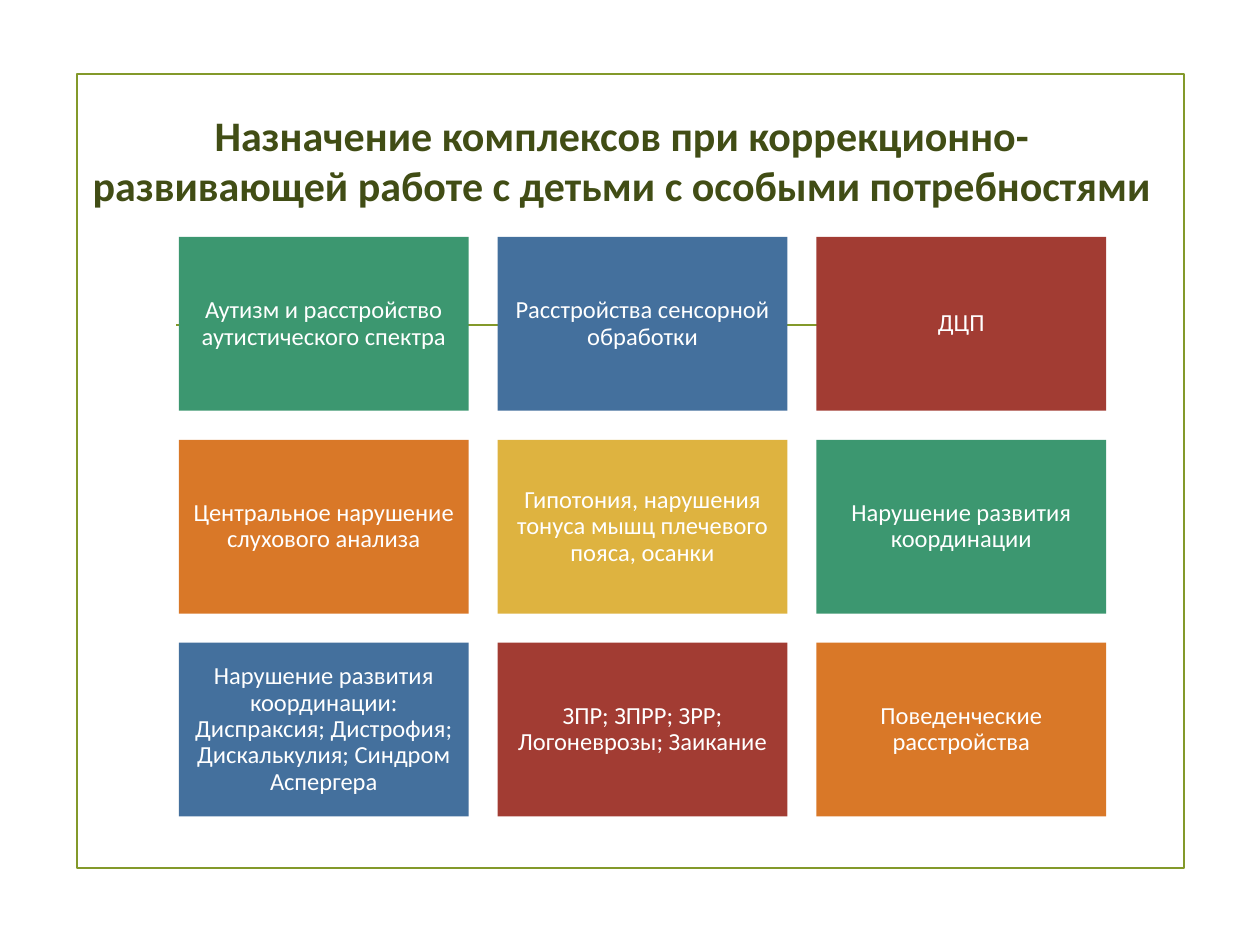
"""Builds a title slide with a three-by-three grid of coloured cards."""
from typing import NamedTuple

from lxml import etree
from pptx import Presentation
from pptx.dml.color import RGBColor
from pptx.enum.shapes import MSO_CONNECTOR, MSO_SHAPE
from pptx.enum.text import MSO_ANCHOR, MSO_AUTO_SIZE, PP_ALIGN
from pptx.oxml.ns import qn
from pptx.util import Inches, Pt

RECTANGLE = MSO_SHAPE.RECTANGLE
STRAIGHT = MSO_CONNECTOR.STRAIGHT
MIDDLE = MSO_ANCHOR.MIDDLE
NO_AUTO_SIZE = MSO_AUTO_SIZE.NONE
CENTER = PP_ALIGN.CENTER

FONT = "Calibri"
OLIVE, DARK_OLIVE, WHITE = "83992A", "414D15", "FFFFFF"
GREEN, BLUE, RED, ORANGE, YELLOW = "3C9770", "44709D", "A23C33", "D97828", "DEB340"
COLUMNS = 3
GRID_LEFT, GRID_TOP = 1.42, 1.88
CARD_WIDTH, CARD_HEIGHT, GAP = 2.3, 1.38, 0.23
TITLE = "Назначение комплексов при коррекционно- развивающей работе с детьми с особыми потребностями"


class Card(NamedTuple):
    text: str
    fill: str


CARDS = [
    Card("Аутизм и расстройство аутистического спектра", GREEN),
    Card("Расстройства сенсорной обработки", BLUE),
    Card("ДЦП", RED),
    Card("Центральное нарушение слухового анализа", ORANGE),
    Card("Гипотония, нарушения тонуса мышц плечевого пояса, осанки", YELLOW),
    Card("Нарушение развития координации", GREEN),
    Card("Нарушение развития координации: Диспраксия; Дистрофия; "
         "Дискалькулия; Синдром Аспергера", BLUE),
    Card("ЗПР; ЗПРР; ЗРР; Логоневрозы; Заикание", RED),
    Card("Поведенческие расстройства", ORANGE),
]


def rgb(color: str) -> RGBColor:
    return RGBColor.from_string(color)


def write_text(shape, text: str, size: float, color: str, bold: bool = False) -> None:
    frame = shape.text_frame
    frame.text = text
    frame.word_wrap = True
    frame.auto_size = NO_AUTO_SIZE
    frame.vertical_anchor = MIDDLE
    paragraph = frame.paragraphs[0]
    paragraph.alignment = CENTER
    font = paragraph.runs[0].font
    font.name, font.size, font.bold = FONT, Pt(size), bold
    font.color.rgb = rgb(color)


def add_frame(slide) -> None:
    shape = slide.shapes.add_shape(
        RECTANGLE, Inches(0.61), Inches(0.59), Inches(8.79), Inches(6.3))
    shape.shadow.inherit = False
    shape.fill.background()
    shape.line.color.rgb = rgb(OLIVE)
    shape.line.width = Pt(1.25)


def add_rule(slide) -> None:
    y = Inches(2.58)
    connector = slide.shapes.add_connector(STRAIGHT, Inches(1.4), y, Inches(8.61), y)
    connector.line.color.rgb = rgb(OLIVE)
    connector.line.width = Pt(1.25)
    etree.SubElement(connector._element.spPr, qn("a:effectLst"))


def set_title(slide) -> None:
    title = slide.shapes.title
    title.left, title.top = Inches(0.57), Inches(0.91)
    title.width, title.height = Inches(8.73), Inches(1.07)
    write_text(title, TITLE, 24, DARK_OLIVE, bold=True)
    title.text_frame.margin_bottom = Inches(0.4)


def add_card(slide, card: Card, index: int) -> None:
    row, column = divmod(index, COLUMNS)
    shape = slide.shapes.add_shape(
        RECTANGLE,
        Inches(GRID_LEFT + column * (CARD_WIDTH + GAP)),
        Inches(GRID_TOP + row * (CARD_HEIGHT + GAP)),
        Inches(CARD_WIDTH), Inches(CARD_HEIGHT))
    shape.shadow.inherit = False
    shape.fill.solid()
    shape.fill.fore_color.rgb = rgb(card.fill)
    shape.line.fill.background()
    write_text(shape, card.text, 14, WHITE)
    frame = shape.text_frame
    frame.margin_left = frame.margin_right = Inches(0.06)
    frame.margin_top = frame.margin_bottom = Inches(0.06)
    frame.paragraphs[0].line_spacing = 0.9


def main() -> None:
    presentation = Presentation()
    presentation.slide_width, presentation.slide_height = Inches(10), Inches(7.5)
    slide = presentation.slides.add_slide(presentation.slide_layouts.get_by_name("Title Only"))
    add_frame(slide)
    add_rule(slide)
    set_title(slide)
    for index, card in enumerate(CARDS):
        add_card(slide, card, index)
    presentation.save("out.pptx")


if __name__ == "__main__":
    main()
